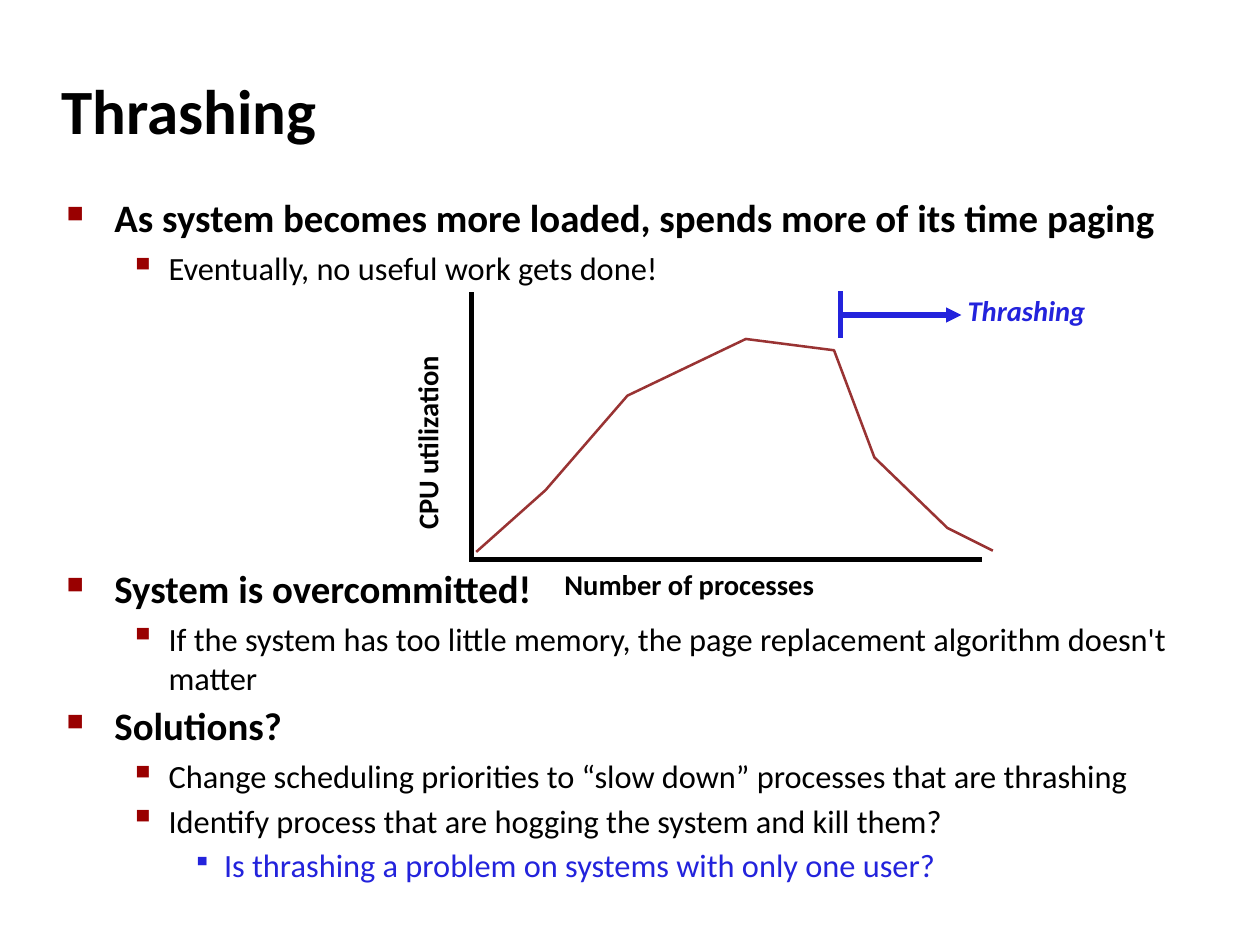
from dataclasses import dataclass

from lxml.etree import SubElement
from pptx import Presentation
from pptx.dml.color import RGBColor
from pptx.enum.shapes import MSO_CONNECTOR
from pptx.enum.text import MSO_ANCHOR
from pptx.oxml.ns import qn
from pptx.util import Inches, Pt


@dataclass(frozen=True)
class Theme:
    font: str = "Calibri"
    ink: str = "000000"
    accent: str = "2323DC"
    bullet: str = "990000"
    curve: str = "993333"
    title_size: float = 36
    heading_size: float = 22.2
    point_size: float = 18.5
    label_size: float = 16.3
    axis_width: float = 2.89
    curve_width: float = 1.45


theme = Theme()


def add_label(text, left, top, width, height, size=theme.label_size, color=theme.ink):
    """Add a bold one-line text box without insets."""
    label = slide.shapes.add_textbox(Inches(left), Inches(top), Inches(width), Inches(height))
    frame = label.text_frame
    frame.word_wrap = True
    frame.margin_left = frame.margin_right = frame.margin_top = frame.margin_bottom = 0
    frame.text = text
    frame.paragraphs[0].line_spacing = 0.94
    font = frame.paragraphs[0].runs[0].font
    font.name, font.size, font.bold = theme.font, Pt(size), True
    font.color.rgb = RGBColor.from_string(color)
    return label


def add_rule(start, end, color):
    rule = slide.shapes.add_connector(MSO_CONNECTOR.STRAIGHT, *map(Inches, start + end))
    rule.line.color.rgb = RGBColor.from_string(color)
    rule.line.width = Pt(theme.axis_width)
    SubElement(rule._element.spPr, qn("a:effectLst"))
    return rule


prs = Presentation()
prs.slide_width, prs.slide_height = Inches(10), Inches(7.5)
slide = prs.slides.add_slide(prs.slide_layouts[6])

title = add_label("Thrashing", 0.49, 0.48, 8.2, 0.83, size=theme.title_size)
title.text_frame.vertical_anchor = MSO_ANCHOR.MIDDLE

# Outline levels: left margin, hanging indent, size, bold, colour, bullet, bullet colour, bullet %
levels = [
    (0.38, 0.38, theme.heading_size, True, theme.ink, "■", theme.bullet, 60),
    (0.81, 0.31, theme.point_size, False, theme.ink, "▪", theme.bullet, 110),
    (1.25, 0.25, theme.point_size, False, theme.accent, "▪", theme.accent, 80),
]
# Level, space before in points, text; the large space leaves room for the graph
outline = [
    (0, 0, "As system becomes more loaded, spends more of its time paging"),
    (1, 4.4, "Eventually, no useful work gets done!"),
    (0, 158.5, "System is overcommitted!"),
    (1, 4.4, "If the system has too little memory, the page replacement algorithm doesn't matter"),
    (0, 3.1, "Solutions?"),
    (1, 4.4, "Change scheduling priorities to “slow down” processes that are thrashing"),
    (1, 3.1, "Identify process that are hogging the system and kill them?"),
    (2, 3.1, "Is thrashing a problem on systems with only one user?"),
]
body = slide.shapes.add_textbox(Inches(0.43), Inches(1.49), Inches(9.25), Inches(6.01)).text_frame
body.word_wrap = True
for index, (level, space, text) in enumerate(outline):
    margin, hanging, size, bold, color, bullet, bullet_color, bullet_percent = levels[level]
    item = body.add_paragraph() if index else body.paragraphs[0]
    item.text = text
    item.level = level
    item.space_before = Pt(space)
    font = item.runs[0].font
    font.name, font.size, font.bold = theme.font, Pt(size), bold
    font.color.rgb = RGBColor.from_string(color)
    props = item._p.get_or_add_pPr()
    props.set("marL", str(Inches(margin)))
    props.set("indent", str(-Inches(hanging)))
    SubElement(SubElement(props, qn("a:buClr")), qn("a:srgbClr"), val=bullet_color)
    SubElement(props, qn("a:buSzPct"), val=str(bullet_percent * 1000))
    SubElement(props, qn("a:buChar"), char=bullet)

# Sketch of CPU utilization against number of processes
add_rule((3.74, 2.32), (3.74, 4.46), theme.ink)
add_rule((3.74, 4.44), (7.79, 4.44), theme.ink)

utilization = [(3.78, 4.38), (4.33, 3.89), (4.98, 3.14), (5.92, 2.69),
               (6.62, 2.78), (6.94, 3.63), (7.52, 4.19), (7.88, 4.37)]
start, *rest = [(Inches(x), Inches(y)) for x, y in utilization]
builder = slide.shapes.build_freeform(*start)
builder.add_line_segments(rest, close=False)
curve = builder.convert_to_shape()
curve.shadow.inherit = False
curve.fill.background()
curve.line.color.rgb = RGBColor.from_string(theme.curve)
curve.line.width = Pt(theme.curve_width)

add_label("Number of processes", 4.48, 4.52, 4.91, 0.26)
add_label("CPU utilization", 2.6, 3.27, 1.61, 0.26).rotation = 270

thrashing_arrow = add_rule((6.68, 2.5), (7.63, 2.5), theme.accent)
SubElement(thrashing_arrow.line._get_or_add_ln(), qn("a:tailEnd"), type="triangle")
add_rule((6.67, 2.31), (6.67, 2.68), theme.accent)
thrashing = add_label("Thrashing", 7.68, 2.35, 1.1, 0.27, color=theme.accent)
thrashing.text_frame.paragraphs[0].runs[0].font.italic = True

prs.save("out.pptx")
